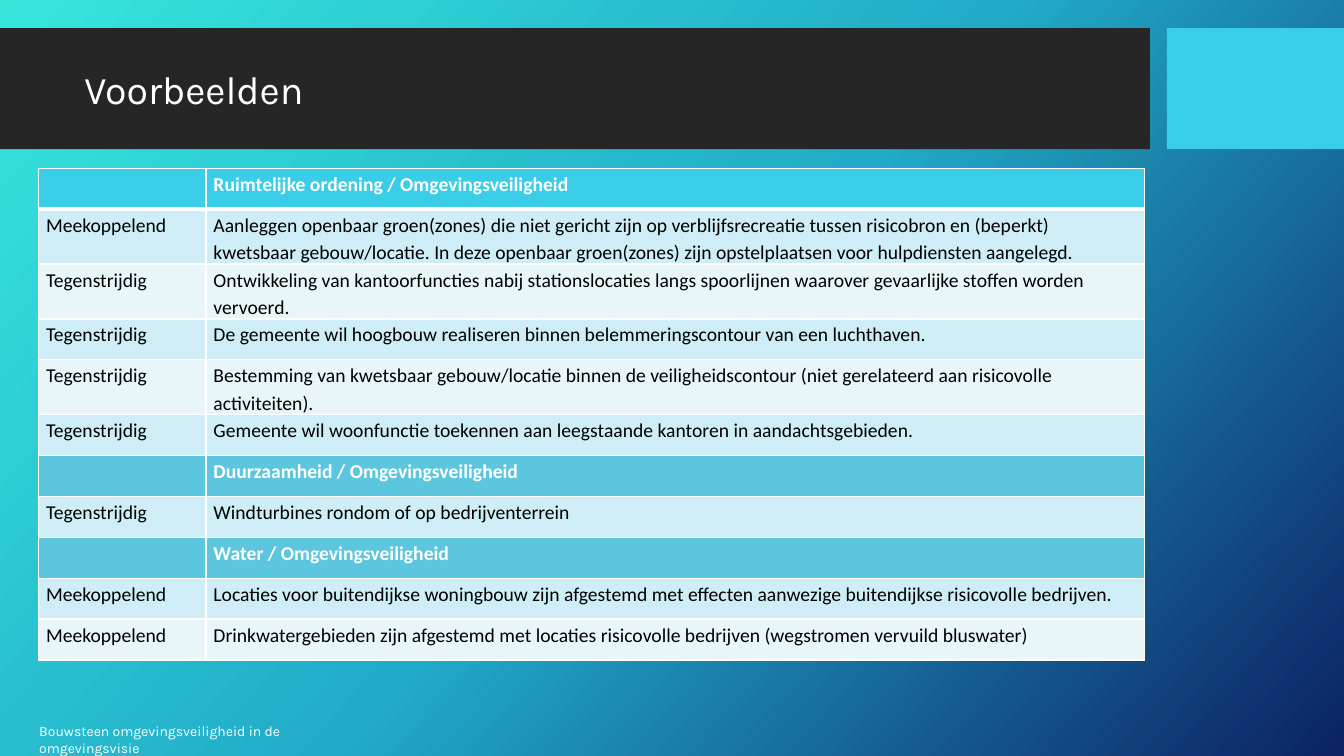
import copy
import pptx
import pptx.util
import pptx.dml.color
import pptx.enum.shapes
import pptx.enum.text
import pptx.oxml
import pptx.oxml.ns

Cm = pptx.util.Cm
Pt = pptx.util.Pt


def tint(code):
    return pptx.dml.color.RGBColor.from_string(code)


def style(frame, name, size, code, space, bold=False):
    para = frame.paragraphs[0]
    para.line_spacing = space
    for run in para.runs:
        run.font.name = name
        run.font.size = Pt(size)
        run.font.bold = bold
        run.font.color.rgb = tint(code)


deck = pptx.Presentation()
deck.slide_width = Cm(33.87)
deck.slide_height = Cm(19.05)
slide = deck.slides.add_slide(deck.slide_layouts[6])

back = slide.background.fill
back.gradient()
first = slide.element.xpath(".//a:gs")[0]
first.addnext(copy.deepcopy(first))
for stop, place, code in zip(back.gradient_stops, (0, 0.5, 1), ("36E6DD", "21ABC8", "0C2263")):
    stop.position = place
    stop.color.rgb = tint(code)
back.gradient_angle = 318

for left, width, code in ((0, 28.98, "262626"), (29.41, 4.46, "39CDE7")):
    bar = slide.shapes.add_shape(
        pptx.enum.shapes.MSO_SHAPE.RECTANGLE, Cm(left), Cm(0.71), Cm(width), Cm(3.05))
    bar.shadow.inherit = False
    bar.fill.solid()
    bar.fill.fore_color.rgb = tint(code)
    bar.line.fill.background()

anchor = pptx.enum.text.MSO_ANCHOR
labels = (
    ("Bouwsteen omgevingsveiligheid in de omgevingsvisie",
     (0.74, 18.08, 8.94, 0.69), 10, 1, anchor.TOP),
    ("Voorbeelden", (1.88, 1.12, 26.7, 2.41), 28, 0.9, anchor.MIDDLE),
)
for text, area, size, space, hold in labels:
    frame = slide.shapes.add_textbox(*[Cm(n) for n in area]).text_frame
    frame.word_wrap = True
    frame.vertical_anchor = hold
    frame.text = text
    style(frame, "Karla", size, "FFFFFF", space)

mee, tegen = "Meekoppelend", "Tegenstrijdig"
light, pale, head = "CEEDF6", "E8F6FA", "5BC6DD"
rows = (
    ("", "Ruimtelijke ordening / Omgevingsveiligheid", "39CDE7"),
    (mee, "Aanleggen openbaar groen(zones) die niet gericht zijn op verblijfsrecreatie tussen risicobron en (beperkt) kwetsbaar gebouw/locatie. In deze openbaar groen(zones) zijn opstelplaatsen voor hulpdiensten aangelegd.", light),
    (tegen, "Ontwikkeling van kantoorfuncties nabij stationslocaties langs spoorlijnen waarover gevaarlijke stoffen worden vervoerd.", pale),
    (tegen, "De gemeente wil hoogbouw realiseren binnen belemmeringscontour van een luchthaven.", light),
    (tegen, "Bestemming van kwetsbaar gebouw/locatie binnen de veiligheidscontour (niet gerelateerd aan risicovolle activiteiten).", pale),
    (tegen, "Gemeente wil woonfunctie toekennen aan leegstaande kantoren in aandachtsgebieden.", light),
    ("", "Duurzaamheid / Omgevingsveiligheid", head),
    (tegen, "Windturbines rondom of op bedrijventerrein", light),
    ("", "Water / Omgevingsveiligheid", head),
    (mee, "Locaties voor buitendijkse woningbouw zijn afgestemd met effecten aanwezige buitendijkse risicovolle bedrijven.", light),
    (mee, "Drinkwatergebieden zijn afgestemd met locaties risicovolle bedrijven (wegstromen vervuild bluswater)", pale),
)
high = 1.03
table = slide.shapes.add_table(
    len(rows), 2, Cm(0.97), Cm(4.24), Cm(27.87), Cm(high * len(rows))).table
table.columns[0].width = Cm(4.22)
table.columns[1].width = Cm(23.65)

for i, (kind, text, code) in enumerate(rows):
    table.rows[i].height = Cm(high)
    for j, words in enumerate((kind, text)):
        cell = table.cell(i, j)
        cell.margin_left = cell.margin_right = Cm(0.19)
        cell.margin_top = Cm(0.02)
        cell.margin_bottom = 0
        cell.text_frame.text = words
        ink = "000000" if kind else "FFFFFF"
        style(cell.text_frame, "Calibri", 14, ink, 1.15, not kind)
        props = cell._tc.get_or_add_tcPr()
        for side in "LRTB":
            thick = 3 if (i, side) in ((0, "B"), (1, "T")) else 1
            props.append(pptx.oxml.parse_xml(
                f'<a:ln{side} {pptx.oxml.ns.nsdecls("a")} w="{Pt(thick)}"><a:solidFill>'
                f'<a:srgbClr val="FFFFFF"/></a:solidFill></a:ln{side}>'))
        cell.fill.solid()
        cell.fill.fore_color.rgb = tint(code)

deck.save("out.pptx")
